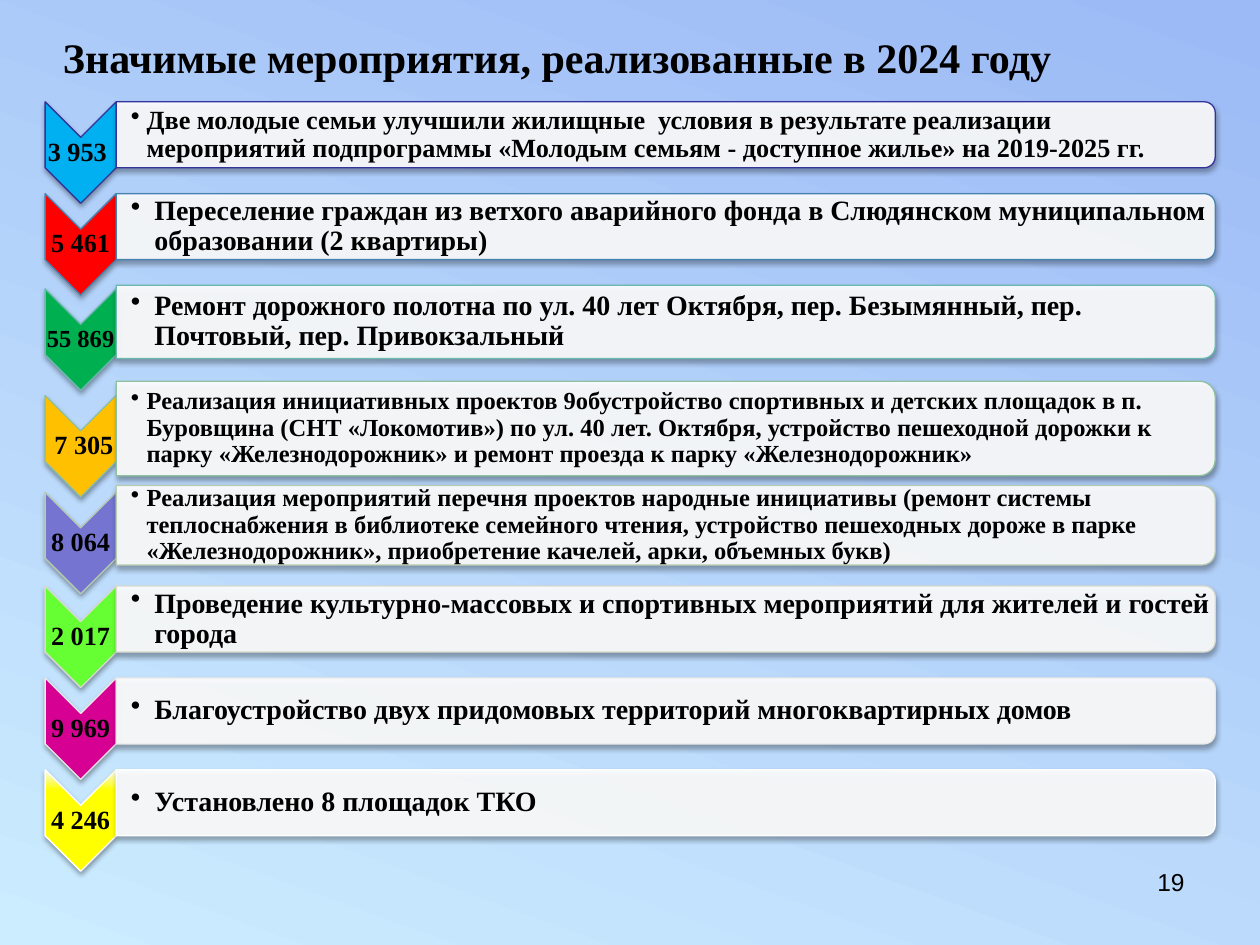
import dataclasses

import lxml.etree
import pptx
import pptx.dml.color
import pptx.enum.dml
import pptx.enum.shapes
import pptx.enum.text
import pptx.oxml.ns
import pptx.util

Pt = pptx.util.Pt
qn = pptx.oxml.ns.qn
Shapes = pptx.enum.shapes.MSO_SHAPE
Align = pptx.enum.text.PP_ALIGN
Anchor = pptx.enum.text.MSO_ANCHOR


@dataclasses.dataclass(frozen=True)
class Theme:
    serif: str = "Times New Roman"
    sans: str = "Arial"
    text: str = "000000"
    panel: str = "FFFFFF"
    panel_opacity: int = 90
    background: tuple = ((0, "CCECFF"), (0.99, "9CBAF5"))
    yellow_fade: tuple = ((0.8, "FFFF00"), (1, "F8F8F8"))
    title_size: int = 24
    page_size: int = 14
    line_width: float = 0.75


THEME = Theme()


@dataclasses.dataclass(frozen=True)
class Event:
    top: float
    height: float
    amount: str
    amount_size: int
    fill: object
    line: str
    text: str
    text_size: int
    indent: float


EVENTS = [
    Event(58.2, 37.7, "3 953 ", 15, "00B0F0", "333399",
          "Две молодые семьи улучшили жилищные  условия в результате реализации "
          "мероприятий подпрограммы «Молодым семьям - доступное жилье» на 2019-2025 гг.", 15, 9),
    Event(110.7, 37.7, "5 461", 15, "FF0000", "4783B1",
          "Переселение граждан из ветхого аварийного фонда в Слюдянском муниципальном "
          "образовании (2 квартиры)", 16, 13.5),
    Event(163, 41.8, "55 869", 14, "00B050", "6BB9AE",
          "Ремонт дорожного полотна по ул. 40 лет Октября, пер. Безымянный, пер. "
          "Почтовый, пер. Привокзальный", 16, 13.5),
    Event(217.8, 54, " 7 305", 15, "FFC000", "8FC19D",
          "Реализация инициативных проектов 9обустройство спортивных и детских площадок в п. "
          "Буровщина (СНТ «Локомотив») по ул. 40 лет. Октября, устройство пешеходной дорожки к "
          "парку «Железнодорожник» и ремонт проезда к парку «Железнодорожник»", 14, 9),
    Event(277.5, 45.4, "8 064", 15, "7575D1", "B7CBAF",
          "Реализация мероприятий перечня проектов народные инициативы (ремонт системы "
          "теплоснабжения в библиотеке семейного чтения, устройство пешеходных дороже в парке "
          "«Железнодорожник», приобретение качелей, арки, объемных букв)", 14, 9),
    Event(334.9, 37.7, "2 017", 15, "66FF33", "D8DACD",
          "Проведение культурно-массовых и спортивных мероприятий для жителей и гостей города",
          16, 13.5),
    Event(387.4, 37.7, "9 969", 15, "D60093", "EBE9E8",
          "Благоустройство двух придомовых территорий многоквартирных домов", 16, 13.5),
    Event(439.9, 37.7, "4 246", 15, THEME.yellow_fade, "FFFFFF",
          "Установлено 8 площадок ТКО", 16, 13.5),
]


def color(value):
    return pptx.dml.color.RGBColor.from_string(value)


def set_gradient(fill, stops, angle):
    fill.gradient()
    fill.gradient_angle = angle
    for stop, (position, value) in zip(fill.gradient_stops, stops):
        stop.position = position
        stop.color.rgb = color(value)


def add_text(slide, box, text, size, font=THEME.serif, bold=True, align=Align.LEFT,
             anchor=Anchor.MIDDLE, margins=(0.7, 0.7, 0.7, 0.7), spacing=None):
    shape = slide.shapes.add_textbox(*map(Pt, box))
    frame = shape.text_frame
    frame.word_wrap = True
    frame.vertical_anchor = anchor
    frame.margin_left, frame.margin_top, frame.margin_right, frame.margin_bottom = map(Pt, margins)
    frame.text = text
    paragraph = frame.paragraphs[0]
    paragraph.alignment = align
    if spacing:
        paragraph.line_spacing = spacing
    font_object = paragraph.runs[0].font
    font_object.name = font
    font_object.size = Pt(size)
    font_object.bold = bold
    font_object.color.rgb = color(THEME.text)
    return paragraph


def add_bullet(paragraph, indent):
    properties = paragraph._p.get_or_add_pPr()
    properties.set("marL", str(Pt(indent)))
    properties.set("indent", str(-Pt(indent)))
    lxml.etree.SubElement(properties, qn("a:buChar"), char="•")


def add_shadow(shape):
    shape.shadow.inherit = False
    effects = shape._element.spPr.find(qn("a:effectLst"))
    shadow = lxml.etree.SubElement(
        effects, qn("a:outerShdw"), blurRad=str(Pt(3.1)), dist=str(Pt(1.8)),
        dir="5400000", rotWithShape="0")
    shadow_color = lxml.etree.SubElement(shadow, qn("a:srgbClr"), val=THEME.text)
    lxml.etree.SubElement(shadow_color, qn("a:alpha"), val="35000")


def add_turned_shape(slide, kind, box, line):
    left, top, width, height = box
    shape = slide.shapes.add_shape(
        kind, Pt(left + (width - height) / 2), Pt(top + (height - width) / 2), Pt(height), Pt(width))
    shape.rotation = 90
    shape.line.color.rgb = color(line)
    shape.line.width = Pt(THEME.line_width)
    add_shadow(shape)
    return shape


def add_amount(slide, box, event):
    left, top, width, height = box
    chevron = add_turned_shape(slide, Shapes.CHEVRON, box, event.line)
    if isinstance(event.fill, str):
        chevron.fill.solid()
        chevron.fill.fore_color.rgb = color(event.fill)
    else:
        set_gradient(chevron.fill, event.fill, 90)
        chevron._element.spPr.find(qn("a:gradFill")).set("rotWithShape", "0")
    add_text(slide, (left, top + 20.4, width, height - 40.8), event.amount, event.amount_size,
             align=Align.CENTER, spacing=0.9)


def add_description(slide, box, event):
    left, top, width, height = box
    panel = add_turned_shape(slide, Shapes.ROUND_2_SAME_RECTANGLE, box, event.line)
    panel.fill.solid()
    panel.fill.fore_color.rgb = color(THEME.panel)
    panel_color = panel._element.spPr.find(qn("a:solidFill"))[0]
    lxml.etree.SubElement(panel_color, qn("a:alpha"), val=str(THEME.panel_opacity * 1000))
    paragraph = add_text(slide, (left, top + 1.8, width - 2, height - 3.6), event.text,
                         event.text_size, margins=(8.4, 0.7, 0.7, 0.7), spacing=0.9)
    add_bullet(paragraph, event.indent)


def add_event(slide, box, event):
    left, top, width, height = box
    chevron_width, chevron_height, base_height = 40.6, 58, 37.7
    add_amount(slide, (left, top + (height - base_height) / 2, chevron_width, chevron_height), event)
    add_description(slide, (left + chevron_width, top, width - chevron_width, height), event)


def add_title(slide, box):
    add_text(slide, box, "Значимые мероприятия, реализованные в 2024 году", THEME.title_size,
             margins=(0, 0, 0, 0))


def add_page_number(slide, box):
    add_text(slide, box, "19", THEME.page_size, font=THEME.sans, bold=False, align=Align.RIGHT,
             anchor=Anchor.TOP, margins=(7.2, 3.6, 7.2, 3.6))


def main():
    presentation = pptx.Presentation()
    presentation.slide_width, presentation.slide_height = Pt(720), Pt(540)
    slide = presentation.slides.add_slide(presentation.slide_layouts[6])
    set_gradient(slide.background.fill, THEME.background, 70)
    add_page_number(slide, (516, 492, 168, 37.5))
    add_title(slide, (36, 7.5, 648, 49.5))
    for event in EVENTS:
        add_event(slide, (25.8, event.top, 668.6, event.height), event)
    presentation.save("out.pptx")


if __name__ == "__main__":
    main()
